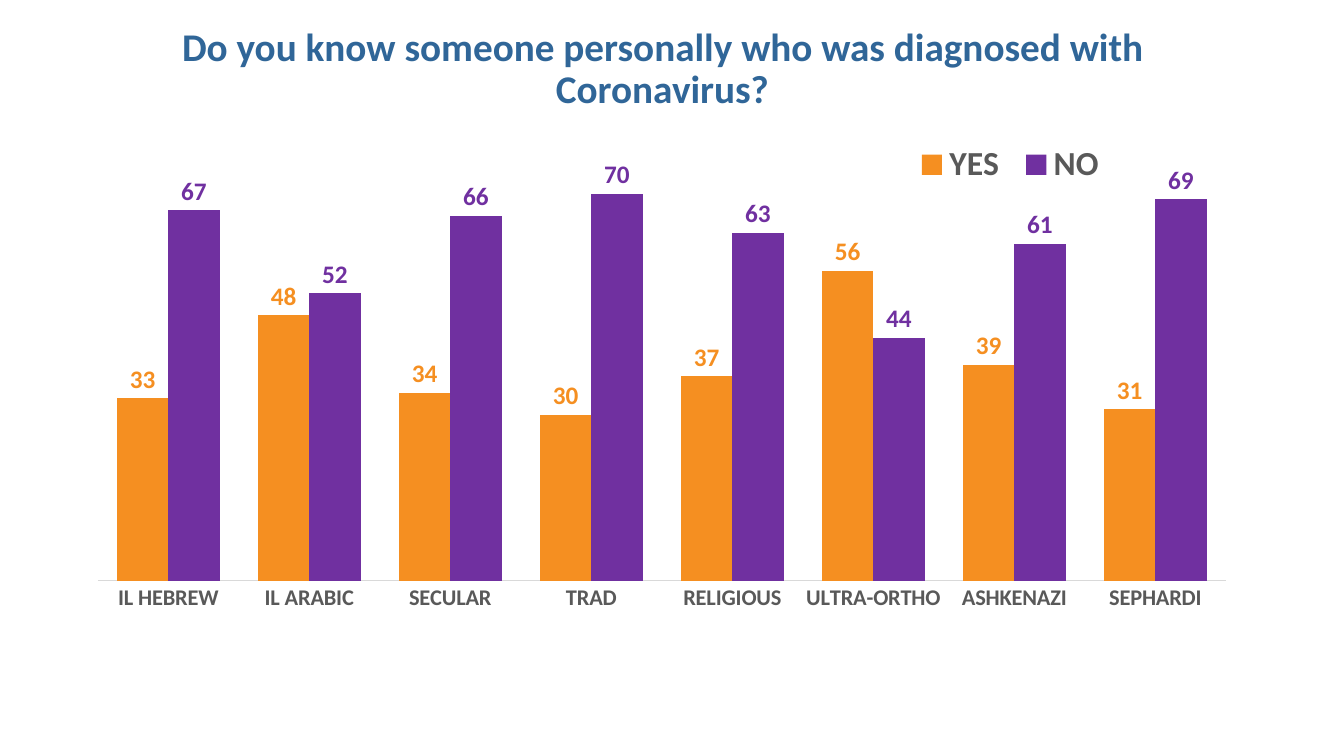
"""Build a slide with a clustered column chart of who knows a diagnosed person."""
from lxml import etree
from pptx import Presentation
from pptx import util as u
from pptx.chart import data as cd
from pptx.dml.color import RGBColor
from pptx.enum import chart as ce, text
from pptx.oxml import ns

TITLE = "Do you know someone personally who was diagnosed with Coronavirus?"
GROUPS = ["IL HEBREW", "IL ARABIC", "SECULAR", "TRAD",
          "RELIGIOUS", "ULTRA-ORTHO", "ASHKENAZI", "SEPHARDI"]
ANSWERS = [
    ("YES", "F58F21", [33, 48, 34, 30, 37, 56, 39, 31]),
    ("NO", "7030A0", [67, 52, 66, 70, 63, 44, 61, 69]),
]
GREY = "595959"
TITLE_BOX = (0.72, 0.25, 11.7, 0.89)
CHART_BOX = (0.82, 1.07, 11.5, 5.64)
PLOT = {"x": 0.013, "y": 0.054, "w": 0.973, "h": 0.778}
KEY = {"x": 0.71, "y": 0.06, "w": 0.18, "h": 0.08}


def box(dims):
    return [u.Inches(d) for d in dims]


def style(font, size, color):
    font.name, font.size, font.bold = "Calibri", u.Pt(size), True
    font.color.rgb = RGBColor.from_string(color)


def layout(area, inner=False):
    for old in area.findall(ns.qn("c:layout")):
        area.remove(old)
    node = etree.Element(ns.qn("c:layout"))
    man = etree.SubElement(node, ns.qn("c:manualLayout"))
    rows = [("layoutTarget", "inner")] if inner else []
    rows += [("xMode", "edge"), ("yMode", "edge")]
    rows += (PLOT if inner else KEY).items()
    for tag, val in rows:
        etree.SubElement(man, ns.qn("c:" + tag)).set("val", str(val))
    area.insert(0 if inner else 1, node)


def add_title(slide):
    frame = slide.shapes.add_textbox(*box(TITLE_BOX)).text_frame
    frame.word_wrap = True
    frame.vertical_anchor = text.MSO_ANCHOR.MIDDLE
    para = frame.paragraphs[0]
    para.alignment = text.PP_ALIGN.CENTER
    para.line_spacing = 0.9
    run = para.add_run()
    run.text = TITLE
    style(run.font, 28, "306698")


def add_chart(slide):
    data = cd.CategoryChartData()
    data.categories = GROUPS
    for name, _, vals in ANSWERS:
        data.add_series(name, vals)
    chart = slide.shapes.add_chart(
        ce.XL_CHART_TYPE.COLUMN_CLUSTERED, *box(CHART_BOX), data).chart
    chart.has_title = False
    chart.font.name, chart.font.size = "Calibri", u.Pt(10)

    plot = chart.plots[0]
    plot.gap_width, plot.overlap = 75, 0
    plot.vary_by_categories = False
    for bars, (_, color, _) in zip(plot.series, ANSWERS):
        bars.format.fill.solid()
        bars.format.fill.fore_color.rgb = RGBColor.from_string(color)
        labels = bars.data_labels
        labels.show_value = True
        labels.position = ce.XL_LABEL_POSITION.OUTSIDE_END
        style(labels.font, 18, color)

    axis = chart.category_axis
    axis.major_tick_mark = ce.XL_TICK_MARK.NONE
    axis.format.line.color.rgb = RGBColor.from_string("D9D9D9")
    axis.format.line.width = u.Pt(0.75)
    style(axis.tick_labels.font, 16, GREY)
    scale = chart.value_axis
    scale.minimum_scale, scale.maximum_scale = 0, 80
    scale.has_major_gridlines = False
    scale.visible = False

    chart.has_legend = True
    chart.legend.position = ce.XL_LEGEND_POSITION.BOTTOM
    chart.legend.include_in_layout = False
    style(chart.legend.font, 24, GREY)
    root = chart.element if hasattr(chart, "element") else chart._chartSpace
    layout(root.find(".//" + ns.qn("c:plotArea")), inner=True)
    layout(root.find(".//" + ns.qn("c:legend")))


def main():
    deck = Presentation()
    deck.slide_width, deck.slide_height = box((13.33, 7.5))
    slide = deck.slides.add_slide(deck.slide_layouts[6])
    add_title(slide)
    add_chart(slide)
    deck.save("out.pptx")


if __name__ == "__main__":
    main()
